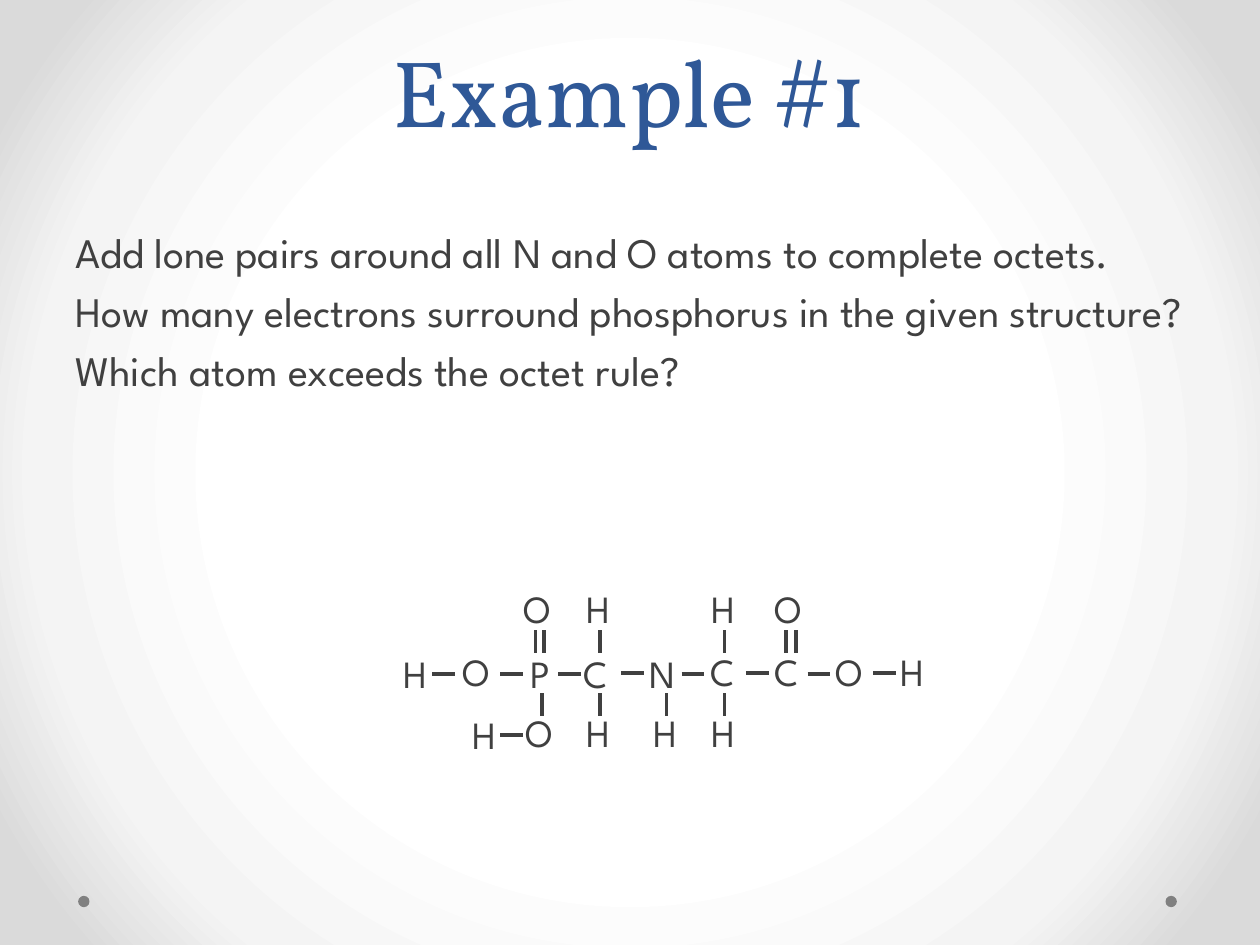
from collections import namedtuple

from lxml.etree import SubElement
from pptx import Presentation
from pptx.dml.color import RGBColor
from pptx.enum.shapes import MSO_CONNECTOR as Connector, MSO_SHAPE as Shape
from pptx.enum.text import MSO_ANCHOR as Anchor, PP_ALIGN as Align
from pptx.oxml import parse_xml
from pptx.oxml.ns import nsdecls, qn
from pptx.util import Inches, Pt

Box = namedtuple("Box", "left top width height")

COLORS = {"title": "2F5897", "text": "404040", "dot": "808080"}
BACKGROUND_STOPS = {50: "FFFFFF", 76: "F4F4F4", 92: "DADADA"}
HEADING, BODY = "Vollkorn", "League Spartan"

QUESTIONS = [
    "Add lone pairs around all N and O atoms to complete octets.",
    "How many electrons surround phosphorus in the given structure?",
    "Which atom exceeds the octet rule?",
]

ATOM_WIDTHS = {"H": 0.41, "O": 0.47, "P": 0.45, "C": 0.45, "N": 0.43}
ATOM_HEIGHT = 0.47
ATOMS = [
    ("O", 0.96, 0), ("H", 1.46, 0), ("H", 2.45, 0), ("O", 2.95, 0),
    ("H", 0, 0.52), ("O", 0.47, 0.5), ("P", 1.01, 0.52),
    ("C", 1.43, 0.52), ("N", 1.96, 0.52), ("C", 2.44, 0.5),
    ("C", 2.95, 0.5), ("O", 3.43, 0.5), ("H", 3.95, 0.5),
    ("H", 0.55, 1), ("O", 0.97, 0.99), ("H", 1.46, 0.99),
    ("H", 1.99, 0.99), ("H", 2.45, 0.99),
]
BOND_LENGTH = 0.18
FLAT_BONDS = {
    0.76: [0.33, 0.87, 1.33, 2.31, 3.31],
    0.75: [1.83, 2.82, 3.83],
    1.24: [0.87],
}
UPRIGHT_BONDS = {
    0.41: [1.15, 1.22, 1.66, 2.65, 3.14, 3.22],
    0.91: [1.2, 1.66, 2.19, 2.65],
}


def set_formats(target, formats):
    for name, value in formats.items():
        setattr(target, name, value)


def add_text(shapes, box, lines, font, color, frame=None, para_formats=None):
    text_box = shapes.add_textbox(*map(Inches, box))
    set_formats(text_box.text_frame, {"word_wrap": True, **(frame or {})})
    for index, line in enumerate(lines):
        paras = text_box.text_frame
        para = paras.add_paragraph() if index else paras.paragraphs[0]
        set_formats(para, para_formats or {})
        span = para.add_run()
        span.text = line
        set_formats(span.font, font)
        span.font.color.rgb = RGBColor.from_string(COLORS[color])


def add_background(page):
    fill = page.background.fill
    fill.solid()
    stops = "".join(
        f'<a:gs pos="{place * 1000}"><a:srgbClr val="{color}"/></a:gs>'
        for place, color in BACKGROUND_STOPS.items()
    )
    gradient = parse_xml(
        f'<a:gradFill {nsdecls("a")} rotWithShape="1"><a:gsLst>{stops}</a:gsLst>'
        '<a:path path="circle">'
        '<a:fillToRect l="50000" t="50000" r="50000" b="50000"/>'
        '</a:path></a:gradFill>'
    )
    solid = next(page.background._cSld.iter(qn("a:solidFill")))
    solid.getparent().replace(solid, gradient)


def add_footer_dots(page, box):
    size = box.height
    for left in (box.left, box.left + box.width - size):
        dot = page.shapes.add_shape(
            Shape.OVAL, *map(Inches, (left, box.top, size, size)))
        dot.shadow.inherit = False
        dot.fill.solid()
        dot.fill.fore_color.rgb = RGBColor.from_string(COLORS["dot"])
        dot.line.fill.background()


def add_title(page, box):
    add_text(page.shapes, box, ["Example #1"],
             {"name": HEADING, "size": Pt(54)}, "title",
             {"vertical_anchor": Anchor.BOTTOM},
             {"alignment": Align.CENTER, "line_spacing": Pt(58)})


def add_questions(page, box):
    add_text(page.shapes, box, QUESTIONS,
             {"name": BODY, "size": Pt(24)}, "text",
             para_formats={"space_before": Pt(4.8)})


def add_bond(shapes, left, top, width, height):
    ends = left, top, left + width, top + height
    bond = shapes.add_connector(Connector.STRAIGHT, *map(Inches, ends))
    bond.line.width = Pt(2.25)
    bond.line.color.rgb = RGBColor.from_string(COLORS["text"])
    SubElement(bond._element.spPr, qn("a:effectLst"))


def add_molecule(page, box):
    shapes = page.shapes.add_group_shape().shapes
    for symbol, left, top in ATOMS:
        place = Box(box.left + left, box.top + top,
                    ATOM_WIDTHS[symbol], ATOM_HEIGHT)
        add_text(shapes, place, [symbol],
                 {"name": BODY, "size": Pt(22)}, "text",
                 {"word_wrap": False})
    for bonds, width, height in ((FLAT_BONDS, BOND_LENGTH, 0),
                                 (UPRIGHT_BONDS, 0, BOND_LENGTH)):
        for top, lefts in bonds.items():
            for left in lefts:
                add_bond(shapes, box.left + left, box.top + top, width, height)


def main():
    deck = Presentation()
    set_formats(deck, {"slide_width": Inches(10), "slide_height": Inches(7.5)})
    page = deck.slides.add_slide(deck.slide_layouts[6])
    add_background(page)
    add_footer_dots(page, Box(0.62, 7.11, 8.72, 0.09))
    add_title(page, Box(0.5, 0, 9, 1.21))
    add_questions(page, Box(0.5, 1.75, 9, 4.95))
    add_molecule(page, Box(3.1, 4.59, 4.36, 1.47))
    deck.save("out.pptx")


if __name__ == "__main__":
    main()
